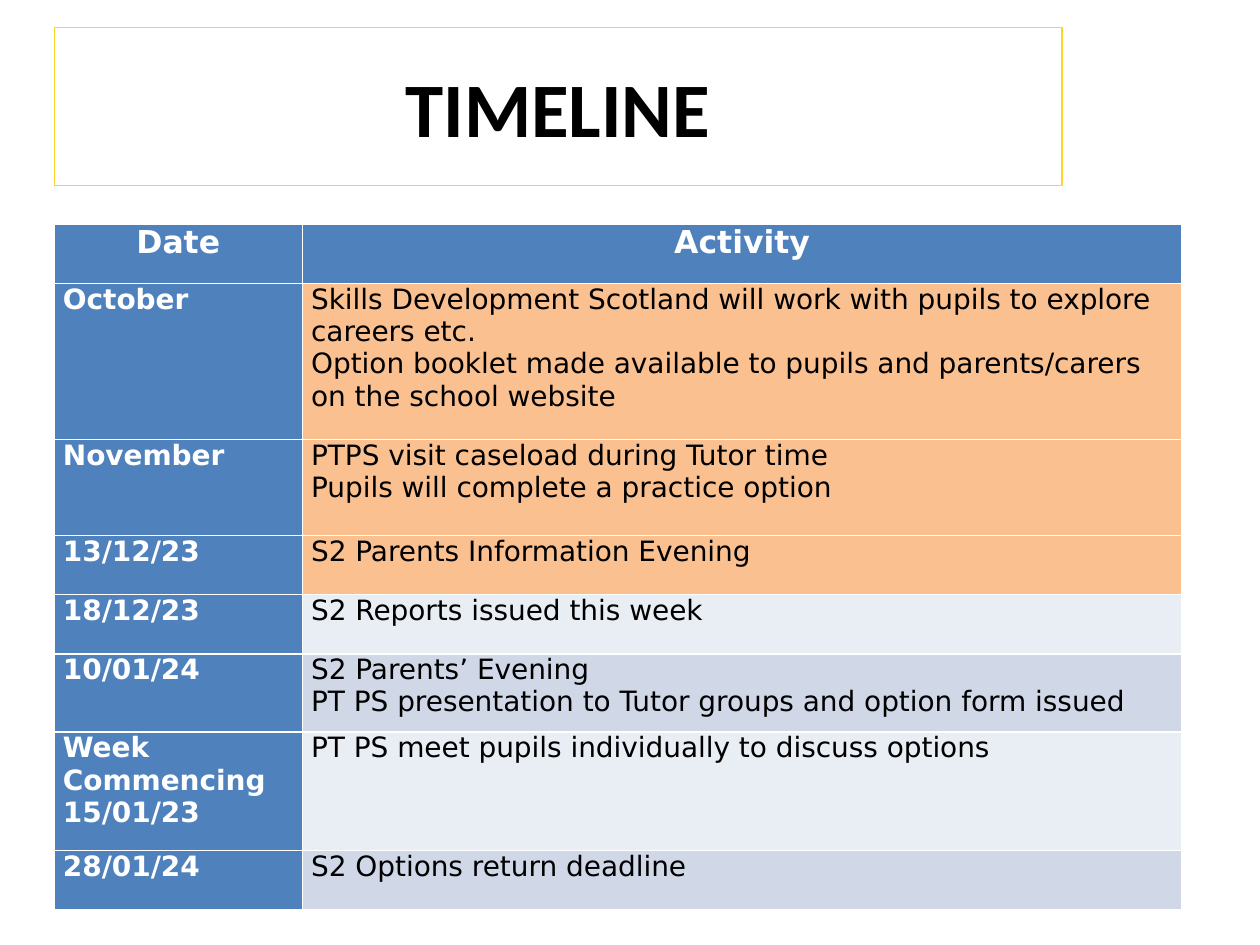
from pptx import Presentation
from pptx.dml.color import RGBColor
from pptx.enum.text import MSO_ANCHOR, PP_ALIGN
from pptx.util import Inches, Pt

BLUE, ORANGE, PALE, GREY_BLUE = "4F81BD", "FAC090", "E9EDF4", "D0D8E8"
WHITE, BLACK, YELLOW = "FFFFFF", "000000", "FDD427"


def rgb(value):
    return RGBColor.from_string(value)


def fill_cell(cell, text, fill, color, size, bold, align):
    cell.fill.solid()
    cell.fill.fore_color.rgb = rgb(fill)
    cell.margin_left = cell.margin_right = Inches(0.07)
    cell.margin_top = cell.margin_bottom = Inches(0)
    cell.text = text
    for paragraph in cell.text_frame.paragraphs:
        paragraph.alignment = align
        paragraph.font.name = "DejaVu Sans"
        paragraph.font.size = Pt(size)
        paragraph.font.bold = bold
        paragraph.font.color.rgb = rgb(color)


presentation = Presentation()
presentation.slide_width, presentation.slide_height = Inches(10), Inches(7.5)
slide = presentation.slides.add_slide(presentation.slide_layouts[5])

title = slide.shapes.title
title.left, title.top = Inches(0.43), Inches(0.22)
title.width, title.height = Inches(8), Inches(1.25)
title.line.color.rgb = rgb(YELLOW)
title.line.width = Pt(0.75)
title.text_frame.text = "TIMELINE"
title.text_frame.vertical_anchor = MSO_ANCHOR.MIDDLE
paragraph = title.text_frame.paragraphs[0]
paragraph.alignment = PP_ALIGN.CENTER
paragraph.font.name = "Calibri"
paragraph.font.size = Pt(44)
paragraph.font.bold = True
paragraph.font.color.rgb = rgb(BLACK)

# Row height, date, activity, activity fill
events = [
    (1.24, "October",
     "Skills Development Scotland will work with pupils to explore careers etc.\n"
     "Option booklet made available to pupils and parents/carers on the school website",
     ORANGE),
    (0.76, "November",
     "PTPS visit caseload during Tutor time\nPupils will complete a practice option",
     ORANGE),
    (0.47, "13/12/23", "S2 Parents Information Evening", ORANGE),
    (0.47, "18/12/23", "S2 Reports issued this week", PALE),
    (0.62, "10/01/24",
     "S2 Parents’ Evening\nPT PS presentation to Tutor groups and option form issued",
     GREY_BLUE),
    (0.94, "Week Commencing 15/01/23",
     "PT PS meet pupils individually to discuss options", PALE),
    (0.47, "28/01/24", "S2 Options return deadline", GREY_BLUE),
]

# The default table style supplies the white rules between cells
table = slide.shapes.add_table(
    len(events) + 1, 2, Inches(0.43), Inches(1.78), Inches(8.95), Inches(5.43)
).table
table.first_col = True
table.columns[0].width = Inches(1.97)
table.columns[1].width = Inches(6.98)

table.rows[0].height = Inches(0.47)
for column, heading in enumerate(["Date", "Activity"]):
    fill_cell(table.cell(0, column), heading, BLUE, WHITE, 18, True, PP_ALIGN.CENTER)

for row, (height, date, activity, fill) in enumerate(events, start=1):
    table.rows[row].height = Inches(height)
    fill_cell(table.cell(row, 0), date, BLUE, WHITE, 16, True, PP_ALIGN.LEFT)
    fill_cell(table.cell(row, 1), activity, fill, BLACK, 16, False, PP_ALIGN.LEFT)

presentation.save("out.pptx")
